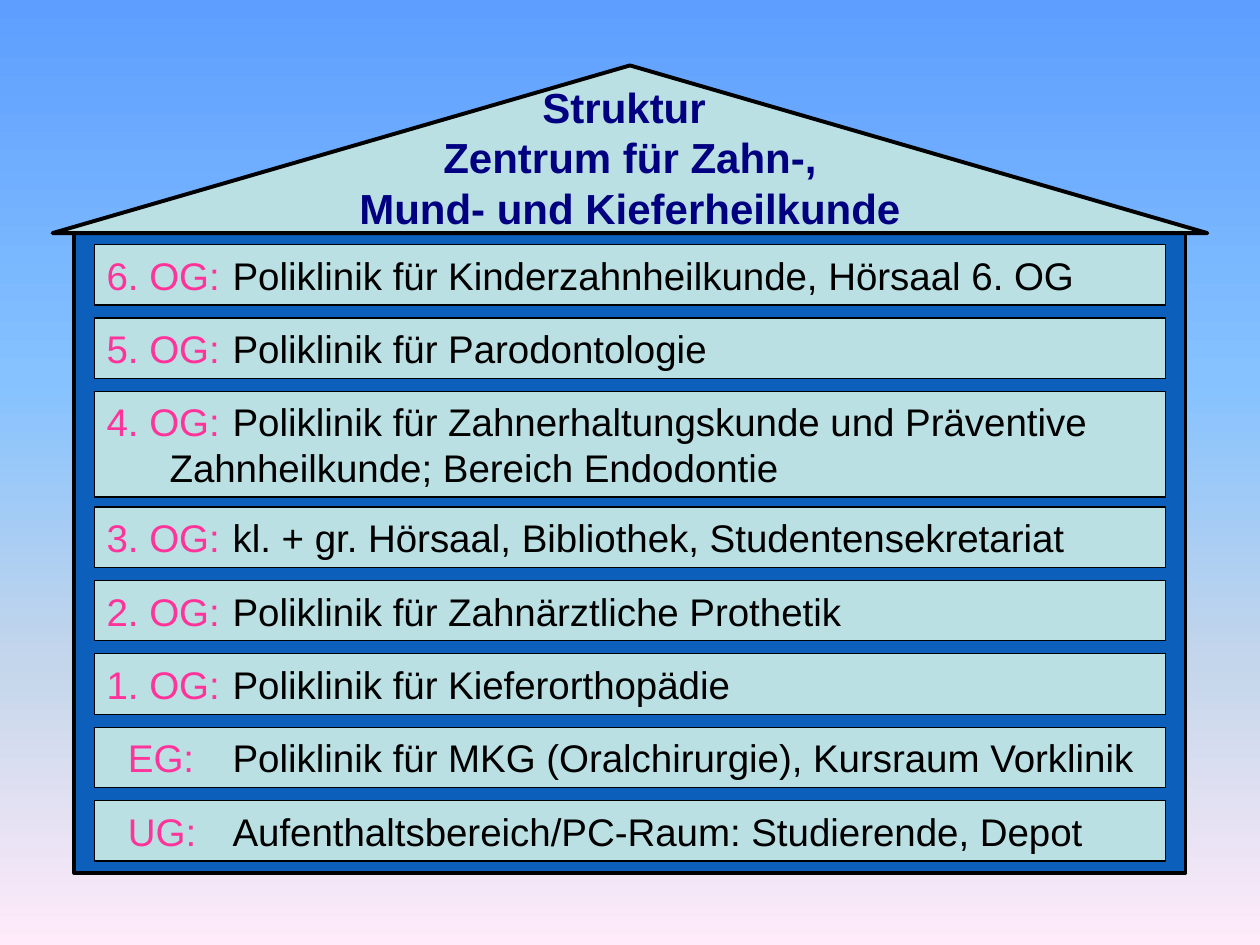
from dataclasses import dataclass

from lxml import etree
from pptx import Presentation
from pptx.dml.color import RGBColor
from pptx.enum.shapes import MSO_SHAPE
from pptx.enum.text import MSO_ANCHOR, PP_ALIGN
from pptx.oxml.ns import qn
from pptx.util import Cm, Pt

RECTANGLE = MSO_SHAPE.RECTANGLE
TRIANGLE = MSO_SHAPE.ISOSCELES_TRIANGLE
TOP, MIDDLE = MSO_ANCHOR.TOP, MSO_ANCHOR.MIDDLE
LEFT, CENTER = PP_ALIGN.LEFT, PP_ALIGN.CENTER


@dataclass(frozen=True)
class Theme:
    font: str = "Arial"
    title_size: float = 24
    floor_size: float = 22
    title: str = "000080"
    label: str = "FF3399"
    text: str = "000000"
    outline: str = "000000"
    wall: str = "0C60BC"
    panel: str = "BBE0E3"
    sky: tuple = ((0, "5E9EFF"), (40, "85C2FF"), (70, "C4D6EB"), (100, "FFEBFA"))


@dataclass(frozen=True)
class Area:
    left: float
    top: float
    width: float
    height: float

    def lengths(self) -> tuple:
        return Cm(self.left), Cm(self.top), Cm(self.width), Cm(self.height)


@dataclass(frozen=True)
class Floor:
    label: str
    lines: tuple
    indent: float = 0
    height: float = 1.22
    gap: float = 0.26


THEME = Theme()
TEXT_COLUMN = 2.68
WALL = Area(1.5, 4.7, 22.4, 12.9)
ROOF = Area(1.06, 1.32, 23.28, 3.38)
TITLE = Area(1.9, 1.52, 21.6, 3.18)
FIRST_FLOOR_TOP = 4.93
FLOOR_LEFT, FLOOR_WIDTH = 1.9, 21.6

TITLE_LINES = ("Struktur ", "Zentrum für Zahn-,", "Mund- und Kieferheilkunde")
FLOORS = (
    Floor("6. OG:", ("Poliklinik für Kinderzahnheilkunde, Hörsaal 6. OG",)),
    Floor("5. OG:", ("Poliklinik für Parodontologie",)),
    Floor("4. OG:", ("Poliklinik für Zahnerhaltungskunde und Präventive",
                     "Zahnheilkunde; Bereich Endodontie"), height=2.13, gap=0.2),
    Floor("3. OG:", ("kl. + gr. Hörsaal, Bibliothek, Studentensekretariat",)),
    Floor("2. OG:", ("Poliklinik für Zahnärztliche Prothetik",)),
    Floor("1. OG:", ("Poliklinik für Kieferorthopädie",)),
    Floor("EG:", ("Poliklinik für MKG (Oralchirurgie), Kursraum Vorklinik",), indent=0.43),
    Floor("UG:", ("Aufenthaltsbereich/PC-Raum: Studierende, Depot",), indent=0.43),
)


def paint_sky(page) -> None:
    fill = page.background.fill
    fill.gradient()
    fill.gradient_angle = 270
    stops = next(page.element.iter(qn("a:gsLst")))
    for stop in list(stops):
        stops.remove(stop)
    for percent, color in THEME.sky:
        stop = etree.SubElement(stops, qn("a:gs"), pos=str(percent * 1000))
        etree.SubElement(stop, qn("a:srgbClr"), val=color)


def add_panel(page, kind, area: Area, fill: str, line_width: float):
    panel = page.shapes.add_shape(kind, *area.lengths())
    panel.shadow.inherit = False
    panel.fill.solid()
    panel.fill.fore_color.rgb = RGBColor.from_string(fill)
    panel.line.color.rgb = RGBColor.from_string(THEME.outline)
    panel.line.width = Pt(line_width)
    return panel


def add_span(para, text: str, size: float, color: str, bold: bool = False) -> None:
    span = para.add_run()
    span.text = text
    span.font.name = THEME.font
    span.font.size = Pt(size)
    span.font.bold = bold
    span.font.color.rgb = RGBColor.from_string(color)


def prepare_para(box, anchor, alignment):
    frame = box.text_frame
    frame.word_wrap = True
    frame.vertical_anchor = anchor
    para = frame.paragraphs[0]
    para.alignment = alignment
    return para


def add_title(page) -> None:
    para = prepare_para(page.shapes.add_textbox(*TITLE.lengths()), TOP, CENTER)
    for number, line in enumerate(TITLE_LINES):
        if number:
            para.add_line_break()
        add_span(para, line, THEME.title_size, THEME.title, bold=True)


def add_floor(page, floor: Floor, top: float) -> None:
    area = Area(FLOOR_LEFT, top, FLOOR_WIDTH, floor.height)
    para = prepare_para(add_panel(page, RECTANGLE, area, THEME.panel, 0.75), MIDDLE, LEFT)
    properties = para._p.get_or_add_pPr()
    properties.set("marL", "0")
    properties.set("indent", str(Cm(floor.indent)))
    tabs = etree.SubElement(properties, qn("a:tabLst"))
    etree.SubElement(tabs, qn("a:tab"), pos=str(Cm(TEXT_COLUMN)), algn="l")
    add_span(para, floor.label, THEME.floor_size, THEME.label)
    for number, line in enumerate(floor.lines):
        if number:
            para.add_line_break()
        add_span(para, "\t" + line, THEME.floor_size, THEME.text)


def main() -> None:
    deck = Presentation()
    deck.slide_width, deck.slide_height = Cm(25.4), Cm(19.05)
    page = deck.slides.add_slide(deck.slide_layouts[6])
    paint_sky(page)
    add_panel(page, RECTANGLE, WALL, THEME.wall, 2.25)
    add_panel(page, TRIANGLE, ROOF, THEME.panel, 2.25)
    add_title(page)
    top = FIRST_FLOOR_TOP
    for floor in FLOORS:
        add_floor(page, floor, top)
        top += floor.height + floor.gap
    deck.save("out.pptx")


if __name__ == "__main__":
    main()
